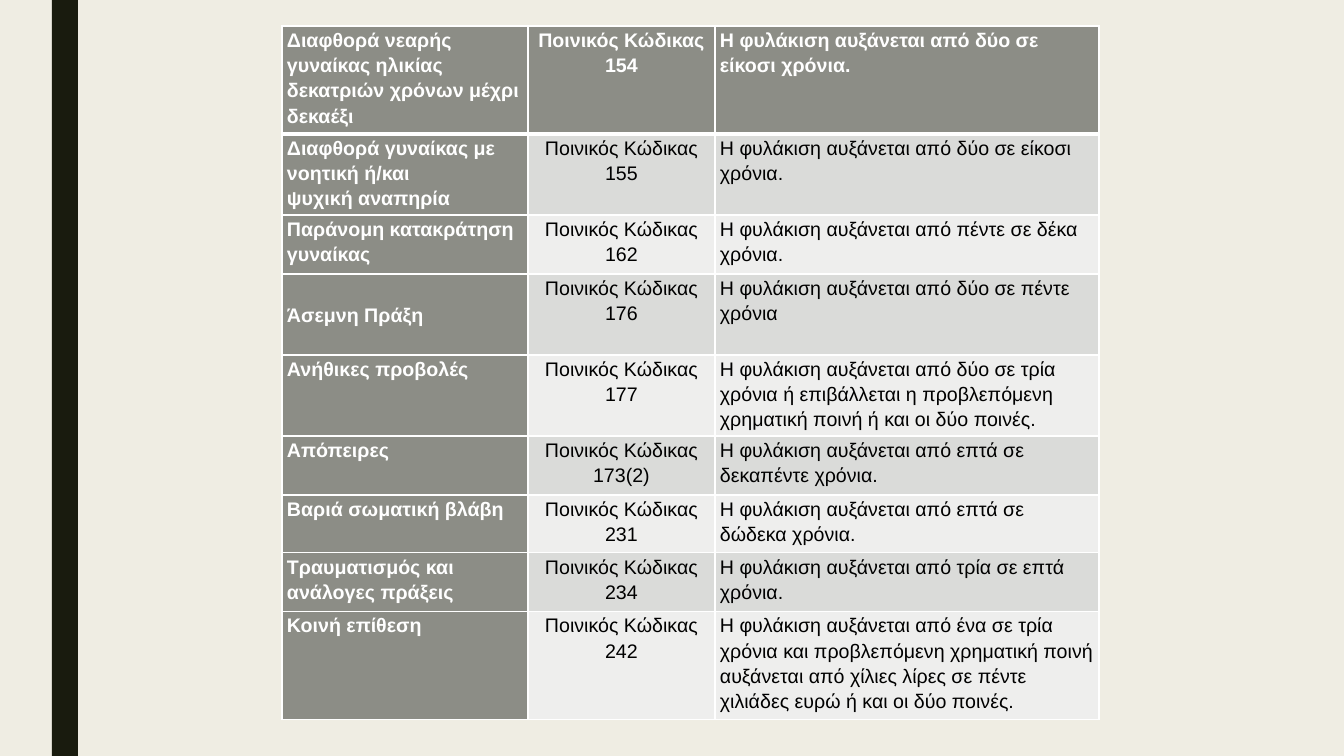
from lxml.etree import SubElement
from pptx import Presentation
from pptx.dml.color import RGBColor
from pptx.enum.shapes import MSO_SHAPE as Preset
from pptx.enum.text import MSO_ANCHOR as Anchor, PP_ALIGN as Align
from pptx.oxml.ns import qn
from pptx.util import Pt

EMU_PER_PX = 914400 / 100.8
BACKGROUND, STRIPE = "EFEDE3", "191B0E"
HEADING, BANDS = "8C8D86", ("EEEEED", "DADBD9")
WHITE, BLACK = "FFFFFF", "000000"
CODE = "Ποινικός Κώδικας"
COLUMN_WIDTHS = (246, 187, 384)
OFFENCES = (
    (108, "Διαφθορά νεαρής γυναίκας ηλικίας δεκατριών χρόνων μέχρι δεκαέξι", "154",
     "Η φυλάκιση αυξάνεται από δύο σε είκοσι χρόνια."),
    (81, "Διαφθορά γυναίκας με νοητική ή/και\vψυχική αναπηρία", "155",
     "Η φυλάκιση αυξάνεται από δύο σε είκοσι χρόνια."),
    (59, "Παράνομη κατακράτηση γυναίκας", "162",
     "Η φυλάκιση αυξάνεται από πέντε σε δέκα χρόνια."),
    (81, "Άσεμνη Πράξη", "176",
     "Η φυλάκιση αυξάνεται από δύο σε πέντε χρόνια"),
    (81, "Ανήθικες προβολές", "177",
     "Η φυλάκιση αυξάνεται από δύο σε τρία χρόνια ή επιβάλλεται η προβλεπόμενη "
     "χρηματική ποινή ή και οι δύο ποινές."),
    (59, "Απόπειρες", "173(2)",
     "Η φυλάκιση αυξάνεται από επτά σε δεκαπέντε χρόνια."),
    (58, "Βαριά σωματική βλάβη", "231",
     "Η φυλάκιση αυξάνεται από επτά σε δώδεκα χρόνια."),
    (59, "Τραυματισμός και ανάλογες πράξεις", "234",
     "Η φυλάκιση αυξάνεται από τρία σε επτά χρόνια."),
    (108, "Κοινή επίθεση", "242",
     "Η φυλάκιση αυξάνεται από ένα σε τρία χρόνια και προβλεπόμενη χρηματική ποινή "
     "αυξάνεται από χίλιες λίρες σε πέντε χιλιάδες ευρώ ή και οι δύο ποινές."),
)


def px(length):
    return round(length * EMU_PER_PX)


def paint(fill, color):
    fill.solid()
    fill.fore_color.rgb = RGBColor.from_string(color)


def add_stripe(slide, left, top, width, height):
    stripe = slide.shapes.add_shape(Preset.RECTANGLE, px(left), px(top), px(width), px(height))
    stripe.shadow.inherit = False
    paint(stripe.fill, STRIPE)
    stripe.line.fill.background()


def set_borders(cell, top, bottom):
    properties = cell._tc.get_or_add_tcPr()
    for side, points in (("L", 1), ("R", 1), ("T", top), ("B", bottom)):
        line = SubElement(properties, qn(f"a:ln{side}"), w=str(Pt(points)))
        SubElement(SubElement(line, qn("a:solidFill")), qn("a:srgbClr"), val=WHITE)


def write_cell(cell, text, is_heading, align):
    cell.margin_left = cell.margin_right = px(5)
    cell.margin_top = cell.margin_bottom = 0
    cell.text_frame.text = text
    for paragraph in cell.text_frame.paragraphs:
        paragraph.alignment = align
        paragraph.line_spacing = 1.15
        for run in paragraph.runs:
            run.font.name = "Arial"
            run.font.size = Pt(14)
            run.font.bold = is_heading
            run.font.color.rgb = RGBColor.from_string(WHITE if is_heading else BLACK)


def add_offences_table(slide, left, top):
    height = sum(offence[0] for offence in OFFENCES)
    frame = slide.shapes.add_table(len(OFFENCES), len(COLUMN_WIDTHS), px(left), px(top),
                                   px(sum(COLUMN_WIDTHS)), px(height))
    table = frame.table
    for column, width in zip(table.columns, COLUMN_WIDTHS):
        column.width = px(width)
    for row_index, (row_height, offence, article, penalty) in enumerate(OFFENCES):
        table.rows[row_index].height = px(row_height)
        for column_index, text in enumerate((offence, f"{CODE}\n{article}", penalty)):
            cell = table.cell(row_index, column_index)
            is_heading = row_index == 0 or column_index == 0
            write_cell(cell, text, is_heading, Align.CENTER if column_index == 1 else Align.LEFT)
            set_borders(cell, 3 if row_index == 1 else 1, 3 if row_index == 0 else 1)
            paint(cell.fill, HEADING if is_heading else BANDS[row_index % 2])
    table.cell(3, 0).vertical_anchor = Anchor.MIDDLE


def main():
    presentation = Presentation()
    presentation.slide_width, presentation.slide_height = px(1344), px(756)
    slide = presentation.slides.add_slide(presentation.slide_layouts[6])
    paint(slide.background.fill, BACKGROUND)
    add_stripe(slide, 52, 0, 26, 756)
    add_offences_table(slide, 282, 26)
    presentation.save("out.pptx")


if __name__ == "__main__":
    main()
